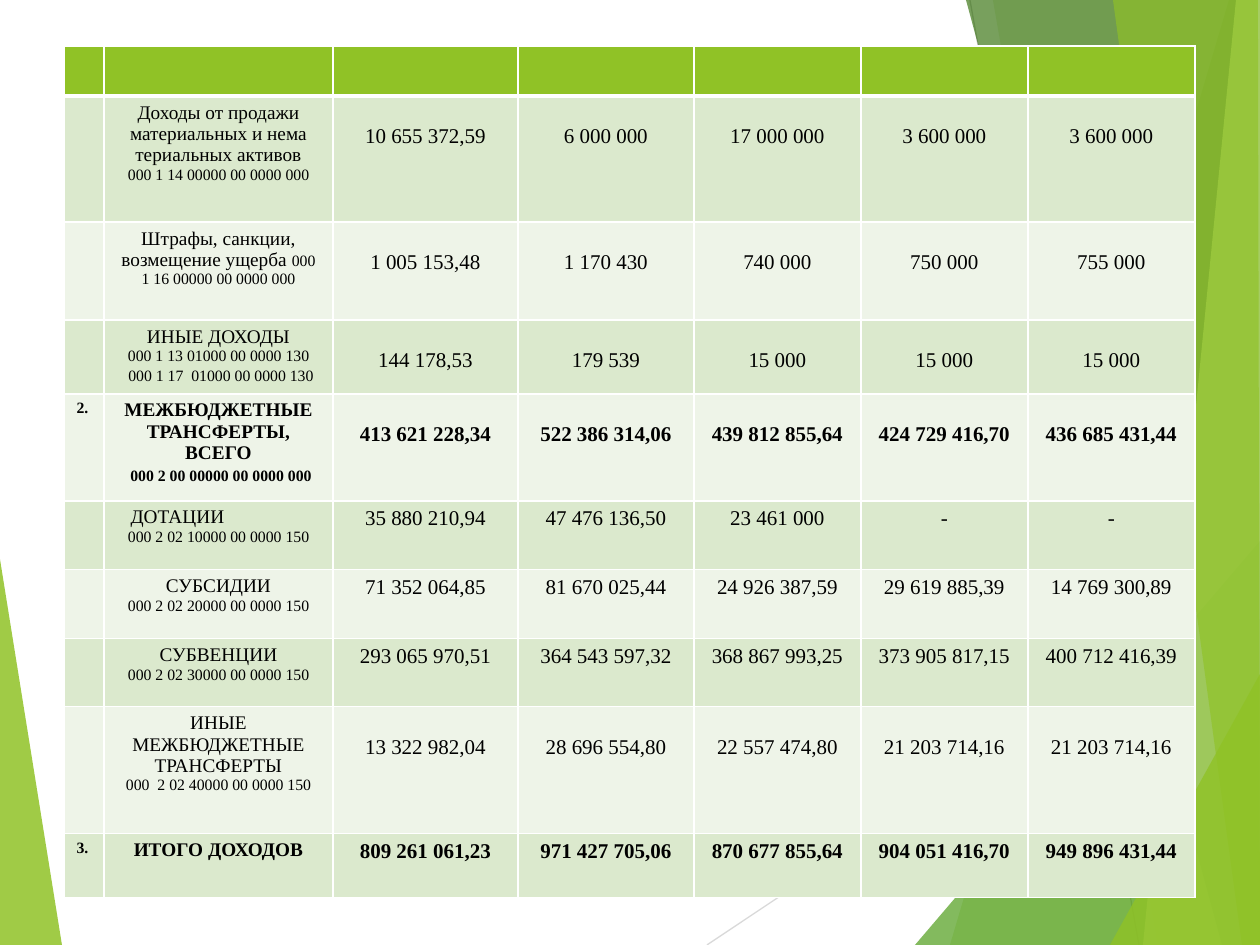
from lxml.etree import SubElement
from pptx import Presentation
from pptx.dml.color import RGBColor
from pptx.enum.text import PP_ALIGN
from pptx.oxml import parse_xml
from pptx.oxml.ns import nsdecls, qn
from pptx.util import Pt

PX = 914400 // 126
WIDTH, HEIGHT = 1260, 945
FONT = "Times New Roman"
GREEN, WHITE = "90C226", "FFFFFF"
BANDS = ["DBE9CD", "EEF4E8"]
NAME_SIZE, CODE_SIZE, AMOUNT_SIZE = 11, 9, 12
MARGIN, LOWERED_MARGIN = 6, 29
DOTATIONS_INDENT = 14

LEFT_FACET = ([(0, 559), (62, 945), (0, 945)], GREEN, 85)
RAYS = [
    ((707, 945), (1260, 576), "D9D9D9"),
    ((970, 0), (1139, 945), "BFBFBF"),
]
RIGHT_FACETS = [
    ([(1229, 0), (950, 945), (1260, 945), (1260, 0)], GREEN, 30),
    ([(993, 0), (1158, 945), (1260, 945), (1260, 0)], GREEN, 20),
    ([(915, 945), (1260, 541), (1260, 945)], "54A021", 72),
    ([(966, 0), (1222, 945), (1260, 945), (1260, 0)], "3F7819", 70),
    ([(1236, 0), (1143, 945), (1260, 945), (1260, 0)], "C0E474", 70),
    ([(1113, 0), (1242, 945), (1260, 945), (1258, 0)], GREEN, 65),
    ([(1110, 945), (1260, 674), (1260, 945)], GREEN, 80),
]

TABLE_LEFT, TABLE_TOP = 64, 46
COLUMN_WIDTHS = [40, 229, 185, 176, 167, 167, 167]
HEADER_HEIGHT = 50
INCOME_ROWS = [
    (126, "", ["Доходы от продажи материальных и нема териальных активов", "|000 1 14 00000 00 0000 000"],
     ["10 655 372,59", "6 000 000", "17 000 000", "3 600 000", "3 600 000"], True),
    (98, "", ["Штрафы, санкции, возмещение ущерба |000 1 16 00000 00 0000 000"],
     ["1 005 153,48", "1 170 430", "740 000", "750 000", "755 000"], True),
    (74, "", ["ИНЫЕ ДОХОДЫ", "|000 1 13 01000 00 0000 130", " |000 1 17  01000 00 0000 130"],
     ["144 178,53", "179 539", "15 000", "15 000", "15 000"], True),
    (107, "2.", ["МЕЖБЮДЖЕТНЫЕ ТРАНСФЕРТЫ, ВСЕГО", " |000 2 00 00000 00 0000 000"],
     ["413 621 228,34", "522 386 314,06", "439 812 855,64", "424 729 416,70", "436 685 431,44"], True),
    (69, "", ["ДОТАЦИИ", "|000 2 02 10000 00 0000 150"],
     ["35 880 210,94", "47 476 136,50", "23 461 000", "-", "-"], False),
    (69, "", ["СУБСИДИИ", "|000 2 02 20000 00 0000 150"],
     ["71 352 064,85", "81 670 025,44", "24 926 387,59", "29 619 885,39", "14 769 300,89"], False),
    (68, "", ["СУБВЕНЦИИ", "|000 2 02 30000 00 0000 150"],
     ["293 065 970,51", "364 543 597,32", "368 867 993,25", "373 905 817,15", "400 712 416,39"], False),
    (127, "", ["ИНЫЕ МЕЖБЮДЖЕТНЫЕ ТРАНСФЕРТЫ", "|000  2 02 40000 00 0000 150"],
     ["13 322 982,04", "28 696 554,80", "22 557 474,80", "21 203 714,16", "21 203 714,16"], True),
    (64, "3.", ["ИТОГО ДОХОДОВ"],
     ["809 261 061,23", "971 427 705,06", "870 677 855,64", "904 051 416,70", "949 896 431,44"], False),
]


def rgb(value):
    """Return the colour for a hex string."""
    return RGBColor.from_string(value)


def add_facet(slide, points, color, opacity):
    """Draw a translucent polygon of the backdrop."""
    builder = slide.shapes.build_freeform(*points[0], scale=PX)
    builder.add_line_segments(points[1:], close=True)
    facet = builder.convert_to_shape()
    facet.shadow.inherit = False
    facet.fill.solid()
    facet.fill.fore_color.rgb = rgb(color)
    facet.line.fill.background()
    tint = facet.fill._xPr.find(qn("a:solidFill"))[0]
    SubElement(tint, qn("a:alpha"), val=str(opacity * 1000))


def add_ray(slide, start, end, color):
    """Draw a thin straight line of the backdrop."""
    ends = [value * PX for value in (*start, *end)]
    ray = slide.shapes.add_connector(1, *ends)
    ray.line.color.rgb = rgb(color)
    ray.line.width = Pt(0.75)
    SubElement(ray._element.spPr, qn("a:effectLst"))


def style_cell(cell, color, top=1, bottom=1):
    """Fill a cell and give it white borders, with widths in points."""
    cell.fill.solid()
    cell.fill.fore_color.rgb = rgb(color)
    cell.margin_top = MARGIN * PX
    cell.margin_bottom = 0
    sides = [("L", 1), ("R", 1), ("T", top), ("B", bottom)]
    for position, (side, width) in enumerate(sides):
        border = parse_xml(
            f'<a:ln{side} {nsdecls("a")} w="{Pt(width)}"><a:solidFill>'
            f'<a:srgbClr val="{WHITE}"/></a:solidFill></a:ln{side}>'
        )
        cell._tc.get_or_add_tcPr().insert(position, border)


def format_run(run, size, bold):
    """Apply the table's font to a run."""
    run.font.name = FONT
    run.font.size = Pt(size)
    run.font.bold = bold
    run.font.color.rgb = rgb("000000")


def write_value(cell, text, size, bold, align):
    """Write a single-line value in a cell."""
    paragraph = cell.text_frame.paragraphs[0]
    paragraph.text = text
    paragraph.alignment = align
    for run in paragraph.runs:
        format_run(run, size, bold)


def write_label(cell, lines, bold):
    """Write an income name and its smaller budget code, split by a bar."""
    frame = cell.text_frame
    frame.text = "\n".join(line.partition("|")[0] for line in lines)
    for paragraph, line in zip(frame.paragraphs, lines):
        paragraph.alignment = PP_ALIGN.CENTER
        for run in paragraph.runs:
            format_run(run, NAME_SIZE, bold)
        code = line.partition("|")[2]
        if code:
            run = paragraph.add_run()
            run.text = code
            format_run(run, CODE_SIZE, bold)


def add_income_table(slide):
    """Build the table of incomes by year."""
    heights = [HEADER_HEIGHT] + [row[0] for row in INCOME_ROWS]
    table = slide.shapes.add_table(
        len(heights), len(COLUMN_WIDTHS), TABLE_LEFT * PX, TABLE_TOP * PX,
        sum(COLUMN_WIDTHS) * PX, sum(heights) * PX,
    ).table
    for column, width in zip(table.columns, COLUMN_WIDTHS):
        column.width = width * PX
    for row, height in zip(table.rows, heights):
        row.height = height * PX
    for cell in table.rows[0].cells:
        style_cell(cell, GREEN, bottom=3)
    for index, (_, number, label, amounts, lowered) in enumerate(INCOME_ROWS):
        cells = list(table.rows[index + 1].cells)
        bold = bool(number)
        for cell in cells:
            style_cell(cell, BANDS[index % 2], top=1 if index else 3)
        write_value(cells[0], number, CODE_SIZE, bold, PP_ALIGN.LEFT)
        write_label(cells[1], label, bold)
        if label[0] == "ДОТАЦИИ":
            heading = cells[1].text_frame.paragraphs[0]
            heading.alignment = PP_ALIGN.LEFT
            heading._p.get_or_add_pPr().set("marL", str(DOTATIONS_INDENT * PX))
        for cell, amount in zip(cells[2:], amounts):
            write_value(cell, amount, AMOUNT_SIZE, bold, PP_ALIGN.CENTER)
            if lowered:
                cell.margin_top = LOWERED_MARGIN * PX


def main():
    """Build and save the slide."""
    deck = Presentation()
    deck.slide_width, deck.slide_height = WIDTH * PX, HEIGHT * PX
    slide = deck.slides.add_slide(deck.slide_layouts[6])
    add_facet(slide, *LEFT_FACET)
    for ray in RAYS:
        add_ray(slide, *ray)
    for facet in RIGHT_FACETS:
        add_facet(slide, *facet)
    add_income_table(slide)
    deck.save("out.pptx")


if __name__ == "__main__":
    main()
